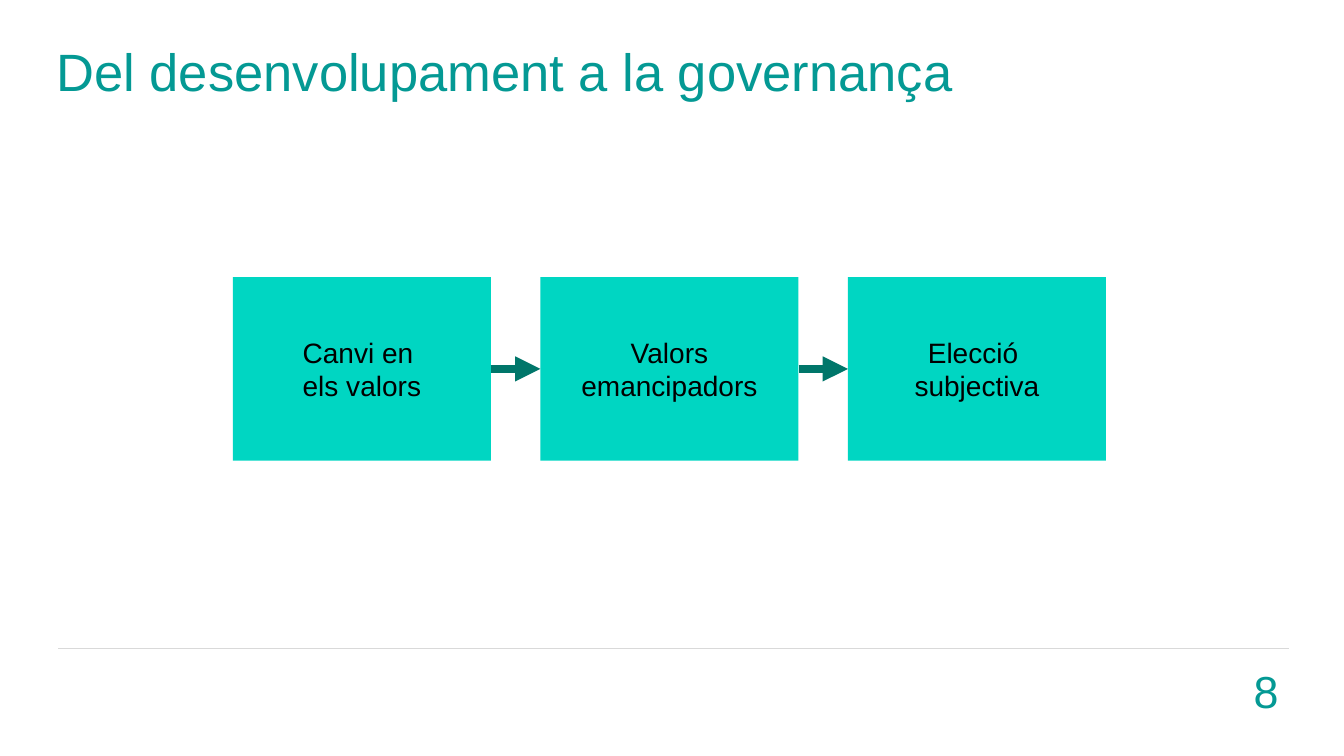
"""Build the slide on the path from development to governance."""
import pptx
import pptx.dml.color
import pptx.enum.shapes
import pptx.enum.text
import pptx.oxml.ns
import pptx.util
from lxml import etree
from pptx.util import Inches

COLOURS = {"title": "049994", "box": "00D6C2", "arrow": "00766A", "rule": "D9D9D9", "text": "000000"}
STEPS = ["Canvi en \nels valors", "Valors\nemancipadors", "Elecció \nsubjectiva"]
BOX_LEFT, BOX_TOP, BOX_WIDTH, BOX_HEIGHT, BOX_PITCH = 2.31, 2.75, 2.56, 1.82, 3.05


def write_text(shape, text, size, colour, align):
    """Fill a shape with vertically centred Arial text."""
    frame = shape.text_frame
    frame.text = text
    frame.word_wrap = True
    frame.auto_size = pptx.enum.text.MSO_AUTO_SIZE.NONE
    frame.vertical_anchor = pptx.enum.text.MSO_ANCHOR.MIDDLE
    for para in frame.paragraphs:
        para.alignment = align
        for span in para.runs:
            span.font.name = "Arial"
            span.font.size = pptx.util.Pt(size)
            span.font.color.rgb = pptx.dml.color.RGBColor.from_string(COLOURS[colour])


def add_line(start, end, colour, width):
    """Draw a straight connector without a shadow."""
    line = page.shapes.add_connector(
        pptx.enum.shapes.MSO_CONNECTOR.STRAIGHT, *map(Inches, start + end))
    line.line.color.rgb = pptx.dml.color.RGBColor.from_string(COLOURS[colour])
    line.line.width = pptx.util.Pt(width)
    etree.SubElement(line._element.spPr, pptx.oxml.ns.qn("a:effectLst"))
    return line


deck = pptx.Presentation()
deck.slide_width, deck.slide_height = Inches(13.33), Inches(7.5)
page = deck.slides.add_slide(deck.slide_layouts[5])
alignment = pptx.enum.text.PP_ALIGN

add_line((0.58, 6.43), (12.78, 6.43), "rule", 0.5)

title = page.shapes.title
title.left, title.top, title.width, title.height = map(Inches, (0.46, 0.44, 10.47, 0.59))
write_text(title, "Del desenvolupament a la governança", 37.5, "title", alignment.LEFT)
title.text_frame.paragraphs[0].line_spacing = 0.9

previous_box = None
for index, step in enumerate(STEPS):
    left = BOX_LEFT + index * BOX_PITCH
    box = page.shapes.add_shape(
        pptx.enum.shapes.MSO_SHAPE.RECTANGLE,
        *map(Inches, (left, BOX_TOP, BOX_WIDTH, BOX_HEIGHT)))
    box.shadow.inherit = False
    box.fill.solid()
    box.fill.fore_color.rgb = pptx.dml.color.RGBColor.from_string(COLOURS["box"])
    box.line.fill.background()
    write_text(box, step, 20, "text", alignment.CENTER)
    if previous_box is not None:
        middle = BOX_TOP + BOX_HEIGHT / 2
        arrow = add_line((left - BOX_PITCH + BOX_WIDTH, middle), (left, middle), "arrow", 6)
        arrow.begin_connect(previous_box, 3)
        arrow.end_connect(box, 1)
        etree.SubElement(arrow.line._get_or_add_ln(), pptx.oxml.ns.qn("a:tailEnd"), type="triangle")
    previous_box = box

number = page.shapes.add_textbox(*map(Inches, (9.3, 6.65, 3.48, 0.4)))
write_text(number, "8", 32, "title", alignment.RIGHT)

deck.save("out.pptx")
